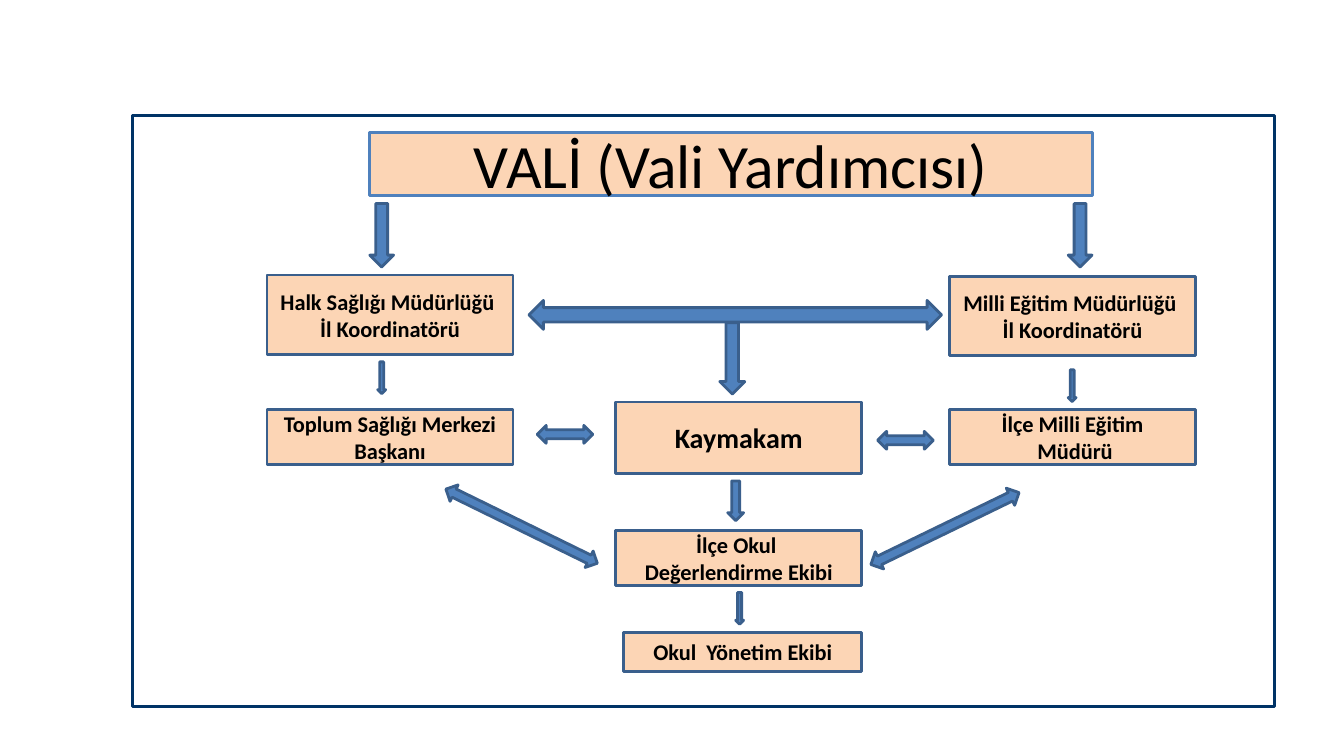
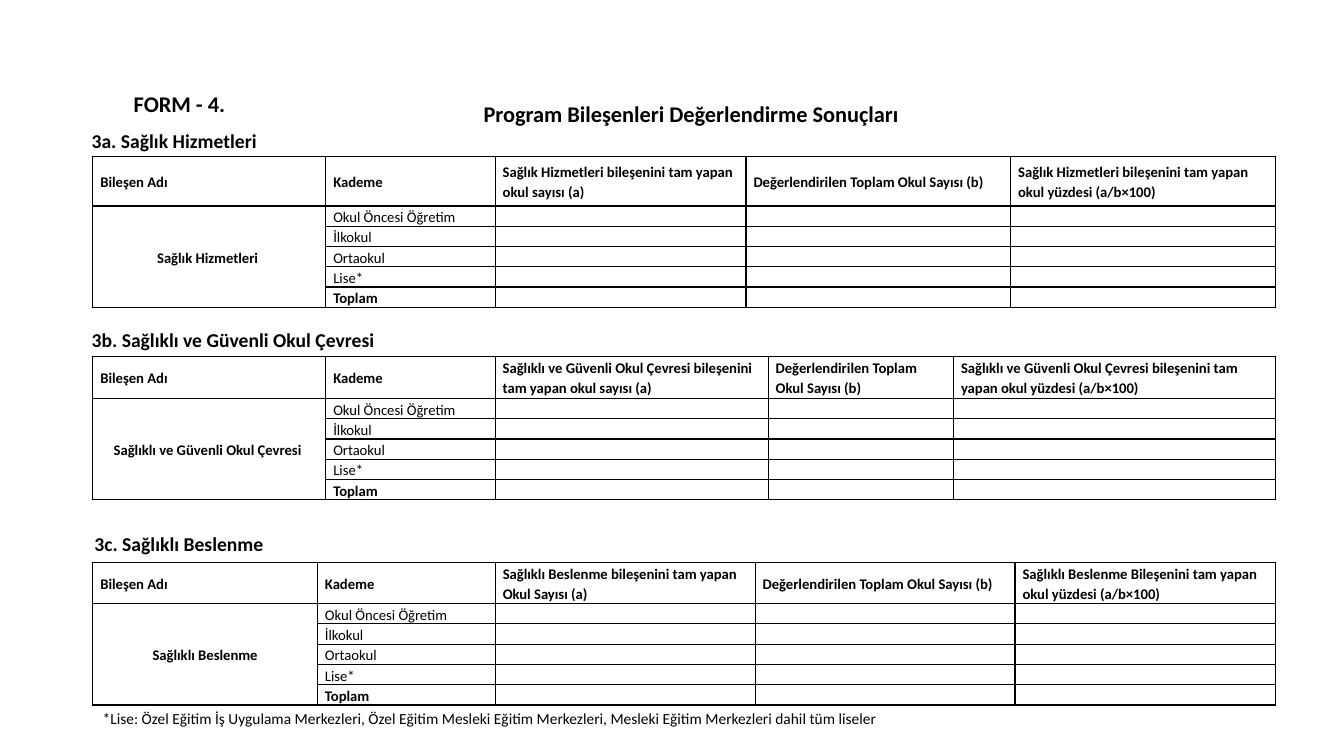
import dataclasses

import lxml.etree
import pptx
import pptx.dml.color
import pptx.enum.shapes
import pptx.enum.text
import pptx.oxml.ns
import pptx.util

Cm = pptx.util.Cm
Pt = pptx.util.Pt
Shape = pptx.enum.shapes.MSO_SHAPE
Align = pptx.enum.text.PP_ALIGN
Anchor = pptx.enum.text.MSO_ANCHOR
qn = pptx.oxml.ns.qn


@dataclasses.dataclass(frozen=True)
class Theme:
    font: str = "Calibri"
    ink: str = "000000"
    peach: str = "FCD5B5"
    blue: str = "4F81BD"
    dark_blue: str = "3A5F8C"
    navy: str = "003366"
    governor: float = 44
    lead: float = 20
    body: float = 16
    heading: float = 14
    note: float = 11
    table: float = 10.5
    outline: float = 2
    frame: float = 2.25
    grid: float = 1


THEME = Theme()


def rgb(value):
    return pptx.dml.color.RGBColor.from_string(value)


class Composer:
    """Holds the deck, its theme and the current page."""

    def __init__(self, theme):
        self.theme = theme
        self.deck = pptx.Presentation()
        self.deck.slide_width = Cm(33.87)
        self.deck.slide_height = Cm(19.05)
        self.page = None

    def new_page(self):
        self.page = self.deck.slides.add_slide(self.deck.slide_layouts[6])

    def add_span(self, para, text, size, bold=False, align=Align.LEFT):
        para.alignment = align
        span = para.add_run()
        span.text = text
        span.font.name = self.theme.font
        span.font.size = Pt(size)
        span.font.bold = bold
        span.font.color.rgb = rgb(self.theme.ink)

    def shape(self, kind, place, fill=None, line=None, width=None, turn=0):
        box = self.page.shapes.add_shape(kind, *map(Cm, place))
        box.shadow.inherit = False
        box.rotation = turn
        if fill:
            box.fill.solid()
            box.fill.fore_color.rgb = rgb(fill)
        else:
            box.fill.background()
        box.line.color.rgb = rgb(line or self.theme.dark_blue)
        box.line.width = Pt(width or self.theme.outline)
        return box

    def node(self, place, lines, size=THEME.body, bold=True, line=None):
        box = self.shape(Shape.RECTANGLE, place, self.theme.peach, line)
        frame = box.text_frame
        frame.word_wrap = True
        frame.vertical_anchor = Anchor.MIDDLE
        for index, text in enumerate(lines):
            para = frame.add_paragraph() if index else frame.paragraphs[0]
            self.add_span(para, text, size, bold, Align.CENTER)

    def arrow(self, kind, place, turn=0):
        self.shape(kind, place, self.theme.blue, turn=turn)

    def label(self, place, text, size, bold=True, align=Align.LEFT,
              anchor=Anchor.MIDDLE):
        box = self.page.shapes.add_textbox(*map(Cm, place))
        frame = box.text_frame
        frame.word_wrap = True
        frame.auto_size = pptx.enum.text.MSO_AUTO_SIZE.SHAPE_TO_FIT_TEXT
        frame.vertical_anchor = anchor
        self.add_span(frame.paragraphs[0], text, size, bold, align)

    def cell(self, cell, text, bold, align):
        cell.margin_left = cell.margin_right = Cm(0.19)
        cell.margin_top = cell.margin_bottom = 0
        cell.vertical_anchor = Anchor.MIDDLE
        para = cell.text_frame.paragraphs[0]
        para.line_spacing = 1.15
        if text:
            self.add_span(para, text, self.theme.table, bold, align)
        else:
            # An empty cell needs its own type size to stay low
            lxml.etree.SubElement(para._p, qn("a:endParaRPr"),
                                  sz=str(int(self.theme.table * 100)))
        properties = cell._tc.get_or_add_tcPr()
        for side in ("lnL", "lnR", "lnT", "lnB"):
            edge = lxml.etree.SubElement(properties, qn("a:" + side),
                                         w=str(int(Pt(self.theme.grid))))
            paint = lxml.etree.SubElement(edge, qn("a:solidFill"))
            lxml.etree.SubElement(paint, qn("a:srgbClr"), val=self.theme.ink)
        cell.fill.background()

    def table(self, left, top, widths, heights, rows):
        frame = self.page.shapes.add_table(
            len(rows), len(widths), Cm(left), Cm(top),
            Cm(sum(widths)), Cm(sum(heights)))
        table = frame.table
        table.first_row = table.horz_banding = False
        for column, width in zip(table.columns, widths):
            column.width = Cm(width)
        for row, height in zip(table.rows, heights):
            row.height = Cm(height)
        last = len(rows) - 1
        for y, texts in enumerate(rows):
            for x, text in enumerate(texts):
                component = x == 0 and y > 0
                self.cell(table.cell(y, x), text,
                          bold=y in (0, last) or component,
                          align=Align.CENTER if component else Align.LEFT)
        table.cell(1, 0).merge(table.cell(last, 0))


def coordination_page(composer):
    theme = composer.theme
    composer.new_page()

    # Frame and governor
    composer.shape(Shape.RECTANGLE, (3.33, 2.92, 28.8, 14.88),
                   line=theme.navy, width=theme.frame)
    composer.node((9.32, 3.33, 18.21, 1.6), ["VALİ (Vali Yardımcısı)"],
                  theme.governor, bold=False, line=theme.blue)

    # Offices in three columns
    left, middle, right, width = 6.73, 15.52, 23.93, 6.2
    low = 1.4
    composer.node((left, 6.93, width, 2),
                  ["Halk Sağlığı Müdürlüğü ", "İl Koordinatörü"])
    composer.node((right, 6.96, width, 2),
                  ["Milli Eğitim Müdürlüğü ", "İl Koordinatörü"])
    composer.node((left, 10.31, width, low),
                  ["Toplum Sağlığı Merkezi Başkanı"])
    composer.node((middle, 10.13, width, 1.8), ["Kaymakam"], theme.lead)
    composer.node((right, 10.31, width, low), ["İlçe Milli Eğitim", " Müdürü"])
    composer.node((middle, 13.36, width, low),
                  ["İlçe Okul ", "Değerlendirme Ekibi"])
    composer.node((15.72, 15.93, 6, 1), ["Okul  Yönetim Ekibi"])

    # Downward arrows
    for place in ((9.32, 5.13, 0.6, 1.6), (26.92, 5.13, 0.6, 1.6),
                  (18.14, 8.13, 0.63, 1.8), (18.34, 12.12, 0.4, 1),
                  (9.52, 9.12, 0.2, 0.8), (26.92, 9.32, 0.2, 0.8),
                  (18.54, 14.93, 0.2, 0.8)):
        composer.arrow(Shape.DOWN_ARROW, place)

    # Two-way arrows
    for place, turn in (((13.33, 7.57, 10.4, 0.73), 0),
                        ((13.54, 10.72, 1.4, 0.45), 0),
                        ((22.12, 10.87, 1.4, 0.45), 0),
                        ((11.02, 13.03, 4.25, 0.46), 26.1),
                        ((21.74, 13.08, 4.15, 0.48), -25.9)):
        composer.arrow(Shape.LEFT_RIGHT_ARROW, place, turn)


def results_page(composer):
    theme = composer.theme
    composer.new_page()

    # Titles
    composer.label((3.12, 2.13, 6.4, 0.94), "FORM - 4.", theme.body)
    composer.label((6.32, 2.39, 22.2, 0.94),
                   "Program Bileşenleri Değerlendirme Sonuçları", theme.body,
                   align=Align.CENTER, anchor=Anchor.TOP)

    # Headings: left, top, width, text
    for left, top, width, text in (
            (2.06, 3.12, 31.8, "3a. Sağlık Hizmetleri"),
            (2.06, 8.13, 31.8, "3b. Sağlıklı ve Güvenli Okul Çevresi"),
            (2.13, 13.26, 29, "3c. Sağlıklı Beslenme")):
        composer.label((left, top, width, 0.86), text, theme.heading)

    # Tables: top, header height, column widths, component, count, percentage
    levels = ["Okul Öncesi Öğretim", "İlkokul", "Ortaokul", "Lise*", "Toplam"]
    for top, header, widths, component, count, percentage in (
            (3.94, 1.25, (5.87, 4.27, 6.32, 6.67, 6.67),
             "Sağlık Hizmetleri ",
             "Sağlık Hizmetleri bileşenini tam yapan okul sayısı (a)",
             "Sağlık Hizmetleri bileşenini tam yapan okul yüzdesi (a/b×100)"),
            (8.98, 1.06, (5.87, 4.27, 6.88, 4.67, 8.11),
             "Sağlıklı ve Güvenli Okul Çevresi ",
             "Sağlıklı ve Güvenli Okul Çevresi bileşenini tam yapan okul "
             "sayısı (a)",
             "Sağlıklı ve Güvenli Okul Çevresi bileşenini tam yapan okul "
             "yüzdesi (a/b×100)"),
            (14.17, 1.04, (5.66, 4.48, 6.55, 6.55, 6.56),
             "Sağlıklı Beslenme",
             "Sağlıklı Beslenme bileşenini tam yapan Okul Sayısı (a)",
             "Sağlıklı Beslenme Bileşenini tam yapan okul yüzdesi "
             "(a/b×100)")):
        rows = [["Bileşen Adı", "Kademe", count,
                 "Değerlendirilen Toplam Okul Sayısı (b)", percentage]]
        rows += [["" if index else component, level, "", "", ""]
                 for index, level in enumerate(levels)]
        composer.table(2.34, top, widths, [header] + [0.51] * len(levels), rows)

    # Footnote
    composer.label((2.34, 17.73, 23.4, 0.74),
                   "*Lise: Özel Eğitim İş Uygulama Merkezleri, Özel Eğitim "
                   "Mesleki Eğitim Merkezleri, Mesleki Eğitim Merkezleri "
                   "dahil tüm liseler", theme.note, bold=False)


def main():
    composer = Composer(THEME)
    coordination_page(composer)
    results_page(composer)
    composer.deck.save("out.pptx")


if __name__ == "__main__":
    main()
